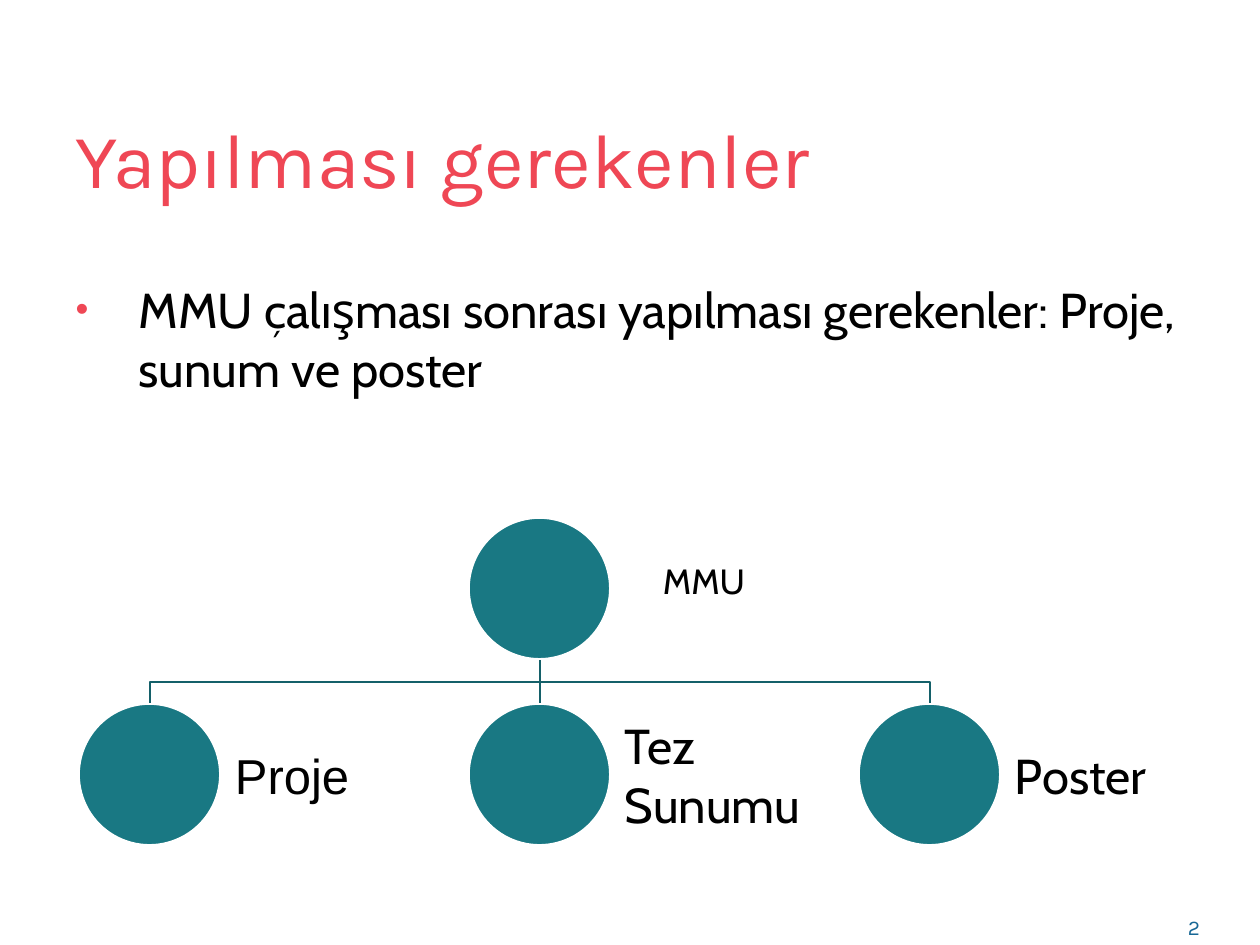
from dataclasses import dataclass

from lxml import etree
from pptx import Presentation
from pptx.dml.color import RGBColor
from pptx.enum.shapes import MSO_CONNECTOR, MSO_SHAPE
from pptx.enum.text import MSO_ANCHOR, PP_ALIGN
from pptx.oxml.ns import qn
from pptx.util import Emu, Pt

STRAIGHT, ELLIPSE = MSO_CONNECTOR.STRAIGHT, MSO_SHAPE.OVAL
TOP, MIDDLE = MSO_ANCHOR.TOP, MSO_ANCHOR.MIDDLE
LEFT, RIGHT = PP_ALIGN.LEFT, PP_ALIGN.RIGHT

TITLE = "Yapılması gerekenler"
BODY = "MMU çalışması sonrası yapılması gerekenler: Proje, sunum ve poster"
PAGE_NUMBER = "2"
ROOT = "MMU"
BRANCHES = [("Proje", "Arial"), ("Tez Sunumu", "Cabin"), ("Poster", "Cabin")]


@dataclass(frozen=True)
class Theme:
    accent: str = "EF4755"
    text: str = "000000"
    circle: str = "197883"
    rim: str = "FFFFFF"
    branch: str = "146069"
    number: str = "176795"
    heading_font: str = "Karla"
    body_font: str = "Cabin"
    title_size: int = 44
    body_size: int = 28
    root_size: int = 20
    number_size: int = 12


THEME = Theme()
SCALE = 914400 / 126
DIAMETER, STEP, LABEL_WIDTH = 141, 390, 213
FIRST_LEFT, ROOT_TOP, BRANCH_TOP = 79, 518, 704
BUS_TOP = 660
BUS_MIDDLE = (BUS_TOP + BRANCH_TOP) // 2


def px(value):
    return Emu(round(value * SCALE))


def color(value):
    return RGBColor.from_string(value)


def write(box, text, font, size, ink, anchor=TOP, align=LEFT):
    frame = box.text_frame
    frame.text = text
    frame.word_wrap = True
    frame.vertical_anchor = anchor
    para = frame.paragraphs[0]
    para.alignment = align
    para.font.name = font
    para.font.size = Pt(size)
    para.font.color.rgb = color(ink)
    return para


def place(box, left, top, width, height):
    box.left, box.top, box.width, box.height = map(px, (left, top, width, height))


def add_label(page, area, inset, *style, **layout):
    box = page.shapes.add_textbox(*map(px, area))
    frame = box.text_frame
    frame.margin_left = frame.margin_right = px(inset)
    frame.margin_top = frame.margin_bottom = px(inset)
    write(box, *style, **layout)


def add_bullet(para, indent):
    properties = para._p.get_or_add_pPr()
    properties.set("marL", str(px(indent)))
    properties.set("indent", str(-px(indent)))
    tint = etree.SubElement(properties, qn("a:buClr"))
    etree.SubElement(tint, qn("a:srgbClr"), val=THEME.accent)
    etree.SubElement(properties, qn("a:buSzPct"), val="75000")
    etree.SubElement(properties, qn("a:buChar"), char="•")


def style_line(line, ink):
    line.color.rgb = color(ink)
    line.width = Pt(1)


def add_circle(page, left, top):
    circle = page.shapes.add_shape(ELLIPSE, *map(px, (left, top, DIAMETER, DIAMETER)))
    circle.shadow.inherit = False
    circle.fill.solid()
    circle.fill.fore_color.rgb = color(THEME.circle)
    style_line(circle.line, THEME.rim)


def add_branch(page, start, end):
    if start == end:
        branch = page.shapes.add_connector(
            STRAIGHT, *map(px, (start, BUS_TOP, end, BRANCH_TOP)))
        etree.SubElement(branch._element.spPr, qn("a:effectLst"))
    else:
        builder = page.shapes.build_freeform(start, BUS_TOP, scale=SCALE)
        builder.add_line_segments(
            [(start, BUS_MIDDLE), (end, BUS_MIDDLE), (end, BRANCH_TOP)], close=False)
        branch = builder.convert_to_shape()
        branch.fill.background()
        branch.shadow.inherit = False
    style_line(branch.line, THEME.branch)


def add_tree(page):
    lefts = [FIRST_LEFT + STEP * index for index in range(len(BRANCHES))]
    root_left = (lefts[0] + lefts[-1]) // 2
    radius = DIAMETER / 2
    for left in lefts:
        add_branch(page, round(root_left + radius), round(left + radius))
    add_circle(page, root_left, ROOT_TOP)
    add_label(page, (653, 537, LABEL_WIDTH, 88), 10, ROOT, THEME.body_font,
              THEME.root_size, THEME.text, anchor=MIDDLE)
    for left, (text, font) in zip(lefts, BRANCHES):
        add_circle(page, left, BRANCH_TOP)
        add_label(page, (left + DIAMETER, BRANCH_TOP, LABEL_WIDTH, DIAMETER), 15,
                  text, font, THEME.body_size, THEME.text, anchor=MIDDLE)


def main():
    deck = Presentation()
    deck.slide_width, deck.slide_height = px(1260), px(945)
    page = deck.slides.add_slide(deck.slide_layouts[1])
    title, body = page.placeholders

    place(title, 63, 63, 1134, 189)
    write(title, TITLE, THEME.heading_font, THEME.title_size, THEME.accent, anchor=MIDDLE)
    place(body, 63, 273, 1134, 121)
    para = write(body, BODY, THEME.body_font, THEME.body_size, THEME.text)
    add_bullet(para, 63)

    add_label(page, (1144, 903, 68, 32), 12, PAGE_NUMBER, THEME.heading_font,
              THEME.number_size, THEME.number, align=RIGHT)
    add_tree(page)
    deck.save("out.pptx")


if __name__ == "__main__":
    main()
